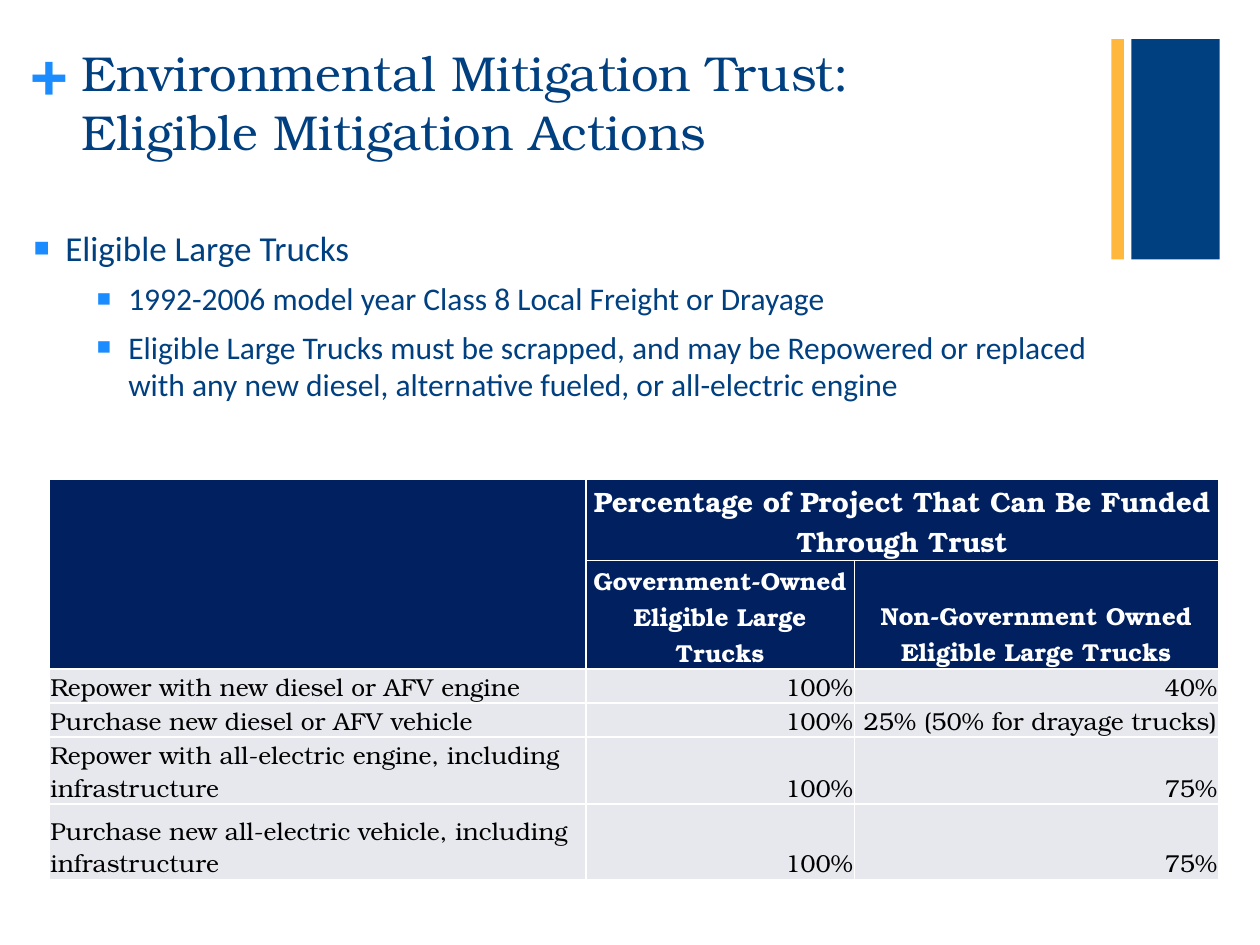
from dataclasses import dataclass

from lxml.etree import SubElement
from pptx import Presentation
from pptx.dml.color import RGBColor
from pptx.enum.shapes import MSO_SHAPE
from pptx.enum.text import MSO_ANCHOR, PP_ALIGN
from pptx.oxml.ns import qn
from pptx.util import Inches, Pt


@dataclass(frozen=True)
class Theme:
    """Colours, typefaces and type sizes of the slide."""
    blue: str = "004080"
    gold: str = "FFB73D"
    bright: str = "1A8CFF"
    navy: str = "002060"
    pale: str = "E7E8ED"
    white: str = "FFFFFF"
    black: str = "000000"
    serif: str = "TeX Gyre Bonum"
    sans: str = "Calibri"
    plus: int = 36
    title: int = 28
    topic: int = 20
    detail: int = 18
    heading: int = 16
    cell: int = 14


THEME = Theme()

POINTS = [
    (0, "Eligible Large Trucks"),
    (1, "1992-2006 model year Class 8 Local Freight or Drayage"),
    (1, "Eligible Large Trucks must be scrapped, and may be Repowered or replaced "
        "with any new diesel, alternative fueled, or all-electric engine"),
]
FUNDING = [
    ("", "Percentage of Project That Can Be Funded Through Trust", ""),
    ("", "Government-Owned Eligible Large Trucks", "Non-Government Owned Eligible Large Trucks"),
    ("Repower with new diesel or AFV engine", "100%", "40%"),
    ("Purchase new diesel or AFV vehicle", "100%", "25% (50% for drayage trucks)"),
    ("Repower with all-electric engine, including infrastructure", "100%", "75%"),
    ("Purchase new all-electric vehicle, including infrastructure", "100%", "75%"),
]
COLUMN_WIDTHS = [4.26, 2.13, 2.89]
ROW_HEIGHTS = [0.65, 0.86, 0.27, 0.27, 0.53, 0.6]


def style(paragraph, face, size, color, bold=False):
    """Set the font of a whole paragraph."""
    font = paragraph.font
    font.name, font.size, font.bold = face, Pt(size), bold
    font.color.rgb = RGBColor.from_string(color)


def add_text_frame(slide, box):
    """Add a wrapping text box and return its text frame."""
    frame = slide.shapes.add_textbox(*map(Inches, box)).text_frame
    frame.word_wrap = True
    return frame


def add_bar(slide, box, color):
    """Add a plain filled rectangle."""
    bar = slide.shapes.add_shape(MSO_SHAPE.RECTANGLE, *map(Inches, box))
    bar.shadow.inherit = False
    bar.fill.solid()
    bar.fill.fore_color.rgb = RGBColor.from_string(color)
    bar.line.fill.background()


def add_corner_bars(slide, box):
    """Place a wide blue bar and a narrow gold bar at the two sides of the box."""
    left, top, width, height = box
    blue_width, gold_width = 0.7, 0.1
    add_bar(slide, (left + width - blue_width, top, blue_width, height), THEME.blue)
    add_bar(slide, (left, top, gold_width, height), THEME.gold)


def add_title(slide, box):
    """Place the title with its plus sign hanging to the left."""
    left, top, _, _ = box
    plus = add_text_frame(slide, (left - 0.31, top - 0.04, 0.29, 0.61))
    plus.margin_left = plus.margin_top = plus.margin_right = plus.margin_bottom = 0
    plus.text = "+"
    style(plus.paragraphs[0], THEME.serif, THEME.plus, THEME.bright, bold=True)

    title = add_text_frame(slide, box)
    title.text = "Environmental Mitigation Trust:"
    heading = title.paragraphs[0]
    heading.add_line_break()
    heading.add_run().text = "Eligible Mitigation Actions"
    style(heading, THEME.serif, THEME.title, THEME.blue)


def add_bullet(paragraph, indent):
    """Give a paragraph a square bullet and a hanging indent."""
    properties = paragraph._p.get_or_add_pPr()
    properties.set("marL", str(Inches(indent)))
    properties.set("indent", str(Inches(-0.25)))
    color = SubElement(properties, qn("a:buClr"))
    SubElement(color, qn("a:srgbClr"), val=THEME.bright)
    SubElement(properties, qn("a:buSzPct"), val="75000")
    SubElement(properties, qn("a:buFont"), typeface="Arial")
    SubElement(properties, qn("a:buChar"), char="■")


def add_points(slide, box):
    """Place the bulleted points."""
    body = add_text_frame(slide, box)
    for index, (level, wording) in enumerate(POINTS):
        point = body.add_paragraph() if index else body.paragraphs[0]
        point.text = wording
        point.space_after = Pt(6)
        style(point, THEME.sans, THEME.detail if level else THEME.topic, THEME.blue)
        add_bullet(point, 0.5 + 0.5 * level)


def add_borders(cell):
    """Draw thin white lines on the four sides of a cell, ahead of its fill."""
    properties = cell._tc.get_or_add_tcPr()
    for position, side in enumerate(("a:lnL", "a:lnR", "a:lnT", "a:lnB")):
        border = SubElement(properties, qn(side), w=str(Pt(1)))
        fill = SubElement(border, qn("a:solidFill"))
        SubElement(fill, qn("a:srgbClr"), val=THEME.white)
        properties.insert(position, border)


def fill_cell(cell, wording, row, column):
    """Write and style one cell according to its row and column."""
    header = row < 2
    cell.text = wording
    cell.vertical_anchor = MSO_ANCHOR.BOTTOM
    cell.margin_left = cell.margin_right = cell.margin_top = Inches(0.01)
    cell.margin_bottom = 0
    cell.fill.solid()
    cell.fill.fore_color.rgb = RGBColor.from_string(THEME.navy if header else THEME.pale)
    add_borders(cell)
    entry = cell.text_frame.paragraphs[0]
    body_alignment = PP_ALIGN.RIGHT if column else PP_ALIGN.LEFT
    entry.alignment = PP_ALIGN.CENTER if header else body_alignment
    style(entry, THEME.serif, THEME.cell if row else THEME.heading,
          THEME.white if header else THEME.black, bold=header)


def add_funding_table(slide, box):
    """Place the table of funded percentages."""
    table = slide.shapes.add_table(len(FUNDING), len(COLUMN_WIDTHS), *map(Inches, box)).table
    for column, width in zip(table.columns, COLUMN_WIDTHS):
        column.width = Inches(width)
    for row, height in zip(table.rows, ROW_HEIGHTS):
        row.height = Inches(height)
    for row, entries in enumerate(FUNDING):
        for column, wording in enumerate(entries):
            fill_cell(table.cell(row, column), wording, row, column)
    table.cell(0, 0).merge(table.cell(1, 0))
    table.cell(0, 1).merge(table.cell(0, 2))


def main():
    """Build the slide and save it."""
    presentation = Presentation()
    presentation.slide_width, presentation.slide_height = Inches(10), Inches(7.5)
    slide = presentation.slides.add_slide(presentation.slide_layouts[6])
    add_corner_bars(slide, (8.82, 0.31, 0.86, 1.75))
    add_title(slide, (0.55, 0.29, 7.02, 1.16))
    add_points(slide, (-0.08, 1.75, 9.14, 5.64))
    add_funding_table(slide, (0.39, 3.8, sum(COLUMN_WIDTHS), sum(ROW_HEIGHTS)))
    presentation.save("out.pptx")


if __name__ == "__main__":
    main()
